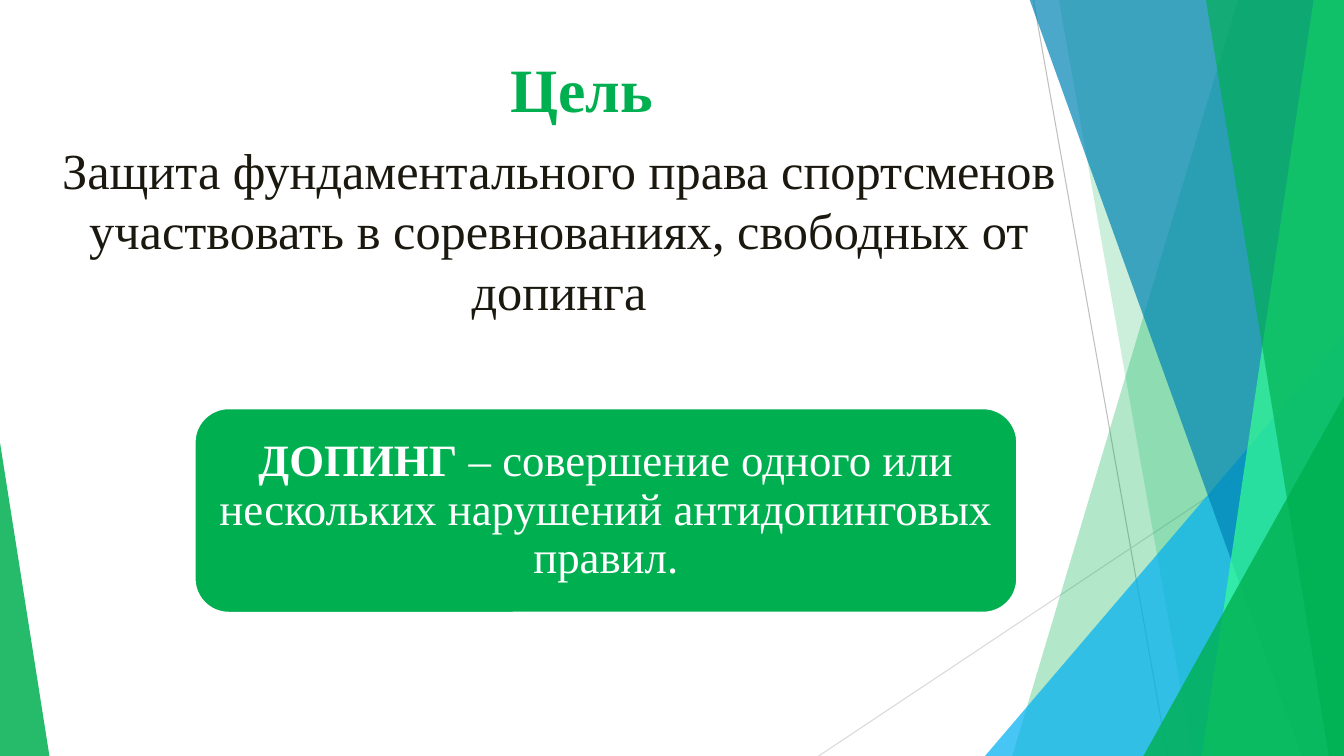
from lxml import etree
from pptx import Presentation
from pptx.dml.color import RGBColor
from pptx.enum.shapes import MSO_CONNECTOR, MSO_SHAPE
from pptx.enum.text import MSO_ANCHOR, MSO_AUTO_SIZE, PP_ALIGN
from pptx.oxml.ns import qn
from pptx.util import Pt

PX = 9144  # 100 px to the inch
WIDE, HIGH = 1333, 750
FONT = "Times New Roman"
LINE = MSO_CONNECTOR.STRAIGHT
WEDGE, CARD = MSO_SHAPE.ISOSCELES_TRIANGLE, MSO_SHAPE.ROUNDED_RECTANGLE
TOP, MIDDLE = MSO_ANCHOR.TOP, MSO_ANCHOR.MIDDLE
CENTER, NO_FIT = PP_ALIGN.CENTER, MSO_AUTO_SIZE.NONE
COLORS = {
    "green": "00B050", "mint": "37FF92", "sky": "00B0F0", "blue": "0084B4",
    "gray": "BFBFBF", "pale": "D9D9D9", "ink": "1B190F", "white": "FFFFFF",
}


def paint(shape, color, alpha):
    """Fill a shape with a color at alpha percent, without line or shadow."""
    shape.shadow.inherit = False
    shape.line.fill.background()
    shape.fill.solid()
    shape.fill.fore_color.rgb = RGBColor.from_string(COLORS[color])
    if alpha < 100:
        tint = shape.element.spPr.find(qn("a:solidFill"))[0]
        etree.SubElement(tint, qn("a:alpha"), val=str(alpha * 1000))


def style(para, size, color):
    para.alignment = CENTER
    para.space_before = Pt(0)
    para.font.name = FONT
    para.font.size = Pt(size)
    para.font.color.rgb = RGBColor.from_string(COLORS[color])


deck = Presentation()
deck.slide_width, deck.slide_height = WIDE * PX, HIGH * PX
slide = deck.slides.add_slide(deck.slide_layouts[1])
shapes = slide.shapes
title, body = slide.placeholders

# Thin lines behind the facets
for color, *ends in [("gray", 1025, 0, 1158, 750), ("pale", 1333, 403, 812, 750)]:
    line = shapes.add_connector(LINE, *[n * PX for n in ends])
    line.line.color.rgb = RGBColor.from_string(COLORS[color])
    line.line.width = Pt(0.75)
    etree.SubElement(line.element.spPr, qn("a:effectLst"))

# Facets from back to front: a band has its top and foot x,
# a wedge has left, top, width and apex
facets = [
    ("green", 30, (1228, 1004)),
    ("green", 20, (1050, 1183)),
    ("sky", 72, (977, 333, 356, 1)),
    ("blue", 70, (1021, 1291)),
    ("mint", 70, (1303, 1192)),
    ("green", 65, (1196, 1318)),
    ("green", 80, (1134, 393, 199, 1)),
    ("green", 85, (0, 439, 49, 0)),
]
for color, alpha, form in facets:
    if len(form) == 2:
        head, foot = form
        outline = shapes.build_freeform(head, -1, scale=PX)
        outline.add_line_segments([(WIDE, -1), (WIDE, HIGH), (foot, HIGH)])
        facet = outline.convert_to_shape()
    else:
        left, top, width, apex = form
        facet = shapes.add_shape(
            WEDGE, left * PX, top * PX, width * PX, (HIGH - top) * PX)
        facet.adjustments[0] = apex
    paint(facet, color, alpha)

# Title and goal, brought in front of the facets
texts = [
    (title, (-23, 46, 1200, 125), "Цель", 44, "green"),
    (body, (41, 133, 1027, 250),
     "Защита фундаментального права спортсменов участвовать в "
     "соревнованиях, свободных от допинга", 36, "ink"),
]
for holder, box, words, size, color in texts:
    holder.left, holder.top, holder.width, holder.height = [n * PX for n in box]
    holder.element.getparent().append(holder.element)
    frame = holder.text_frame
    frame.text = words
    frame.word_wrap = True
    frame.auto_size = NO_FIT
    frame.vertical_anchor = TOP
    para = frame.paragraphs[0]
    props = para._p.get_or_add_pPr()
    props.set("marL", "0")
    props.set("indent", "0")
    etree.SubElement(props, qn("a:buNone"))
    style(para, size, color)
title.text_frame.paragraphs[0].font.bold = True

# Definition card
card = shapes.add_shape(CARD, 193 * PX, 405 * PX, 816 * PX, 203 * PX)
paint(card, "green", 100)
card.line.color.rgb = RGBColor.from_string(COLORS["white"])
card.line.width = Pt(1.5)
frame = card.text_frame
frame.word_wrap = True
frame.vertical_anchor = MIDDLE
frame.margin_left = frame.margin_right = 13 * PX
frame.margin_top = frame.margin_bottom = 13 * PX
para = frame.paragraphs[0]
style(para, 32, "white")
para.line_spacing = 0.9
term = para.add_run()
term.text = "ДОПИНГ"
term.font.bold = True
para.add_run().text = (
    " – совершение одного или нескольких нарушений антидопинговых правил.")

deck.save("out.pptx")
